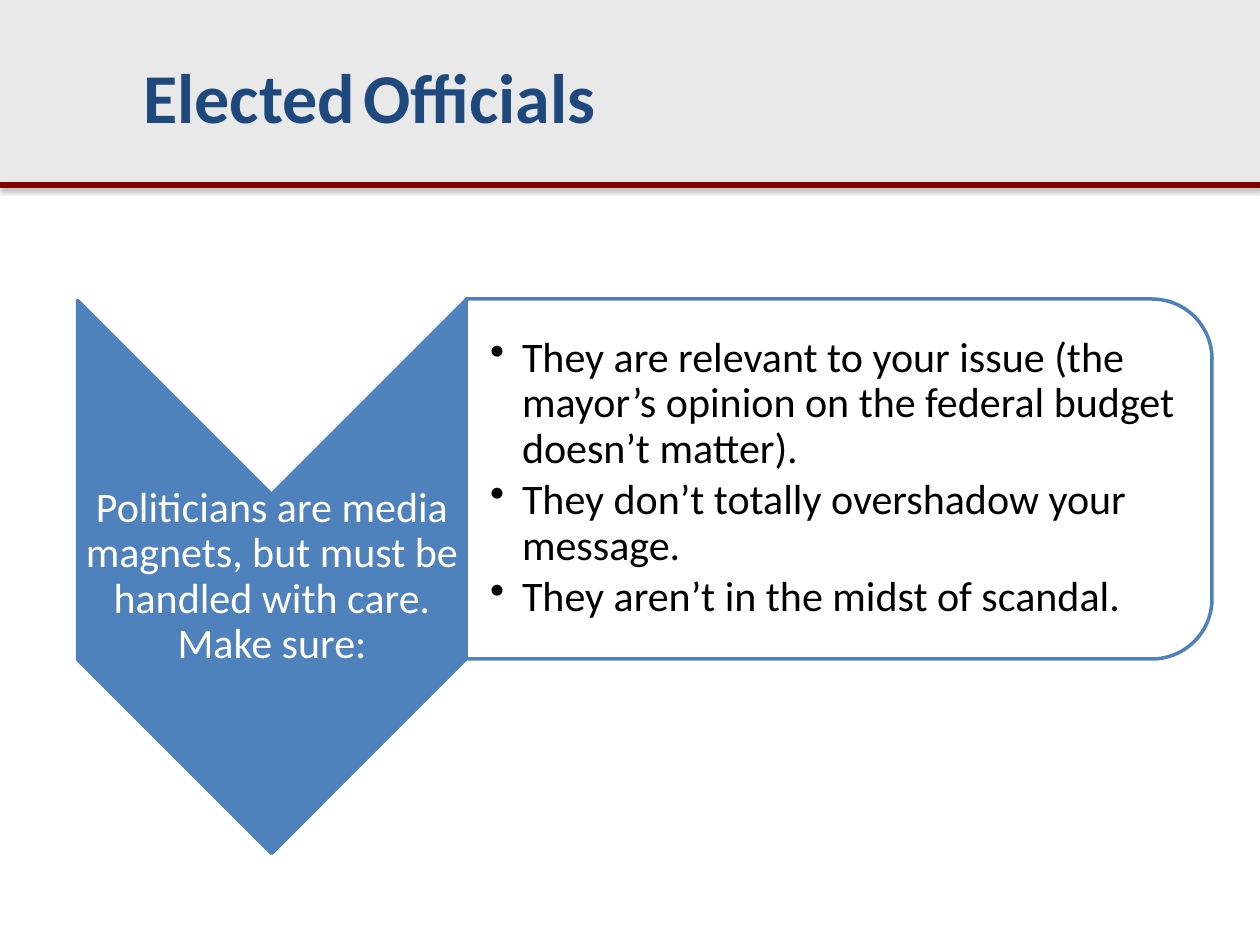
from lxml import etree
from pptx import Presentation
from pptx.dml.color import RGBColor
from pptx.enum.shapes import MSO_CONNECTOR as Connector, MSO_SHAPE as Shape
from pptx.enum.text import MSO_ANCHOR as Anchor, PP_ALIGN as Align
from pptx.oxml import parse_xml
from pptx.oxml.ns import nsdecls, qn
from pptx.util import Pt

PX = 914400 // 126
WIDTH, HEIGHT = 1260, 945


def color(value):
    return RGBColor.from_string(value)


def add_span(para, text, size=24, ink="000000", bold=False, font="Calibri"):
    span = para.add_run()
    span.text = text
    span.font.name = font
    span.font.size = Pt(size)
    span.font.bold = bold
    span.font.color.rgb = color(ink)
    return span


class SlideBuilder:
    navy, blue, maroon, gray, white = "1F497D", "4F81BD", "800000", "E9E9E9", "FFFFFF"

    def __init__(self, page):
        self.page = page

    def shape(self, kind, bounds, fill, line=None, turn=0, opacity=100):
        shape = self.page.shapes.add_shape(kind, *(n * PX for n in bounds))
        shape.shadow.inherit = False
        shape.rotation = turn
        shape.fill.solid()
        shape.fill.fore_color.rgb = color(fill)
        if opacity < 100:
            tint = shape.fill._xPr.find(qn("a:solidFill"))[0]
            etree.SubElement(tint, qn("a:alpha"), val=str(opacity * 1000))
        if line:
            shape.line.color.rgb = color(line)
            shape.line.width = Pt(2)
        else:
            shape.line.fill.background()
        return shape

    def rule(self, y, ink, width):
        line = self.page.shapes.add_connector(
            Connector.STRAIGHT, 0, y * PX, WIDTH * PX, y * PX)
        line.line.color.rgb = color(ink)
        line.line.width = Pt(width)
        line._element.spPr.append(parse_xml(
            f'<a:effectLst {nsdecls("a")}>'
            f'<a:outerShdw blurRad="{Pt(3.1)}" dist="{Pt(1.6)}" dir="5400000" rotWithShape="0">'
            '<a:srgbClr val="000000"><a:alpha val="38000"/></a:srgbClr>'
            '</a:outerShdw></a:effectLst>'))

    def frame(self, bounds, insets=None, anchor=Anchor.TOP):
        box = self.page.shapes.add_textbox(*(n * PX for n in bounds))
        frame = box.text_frame
        frame.word_wrap = True
        frame.vertical_anchor = anchor
        if insets:
            (frame.margin_left, frame.margin_top,
             frame.margin_right, frame.margin_bottom) = (n * PX for n in insets)
        return frame

    def title(self, bounds, spans):
        para = self.frame(bounds).paragraphs[0]
        for text, size, bold in spans:
            add_span(para, text, size=size, ink=self.navy, bold=bold)

    def label(self, bounds, text):
        para = self.frame(bounds, (2, 2, 2, 2), Anchor.MIDDLE).paragraphs[0]
        para.alignment = Align.CENTER
        para.line_spacing = 0.9
        add_span(para, text, ink=self.white)

    def bullets(self, bounds, items, indent=32):
        frame = self.frame(bounds, (24, 2, 2, 2), Anchor.MIDDLE)
        for index, text in enumerate(items):
            para = frame.add_paragraph() if index else frame.paragraphs[0]
            props = para._p.get_or_add_pPr()
            props.set("marL", str(indent * PX))
            props.set("indent", str(-indent * PX))
            etree.SubElement(props, qn("a:buChar"), char="•")
            para.line_spacing = 0.9
            if index:
                para.space_before = Pt(3.6)
            add_span(para, text)


def main():
    deck = Presentation()
    deck.slide_width, deck.slide_height = WIDTH * PX, HEIGHT * PX
    slide = SlideBuilder(deck.slides.add_slide(deck.slide_layouts[6]))

    # Header band and rule
    slide.shape(Shape.RECTANGLE, (0, 0, WIDTH, 182), slide.gray)
    slide.rule(185, slide.maroon, 3)

    # Chevron pointing down
    slide.shape(Shape.CHEVRON, (-5, 383, 553, 388), slide.blue, slide.blue, turn=90)
    slide.label((78, 494, 388, 166),
                "Politicians are media magnets, but must be handled with care. Make sure:")

    # Panel with the conditions
    slide.shape(Shape.ROUND_2_SAME_RECTANGLE, (659, 106, 360, 746),
                slide.white, slide.blue, turn=90, opacity=90)
    slide.bullets((466, 316, 728, 325), [
        "They are relevant to your issue (the mayor’s opinion on the federal budget doesn’t matter).",
        "They don’t totally overshadow your message.",
        "They aren’t in the midst of scandal.",
    ])

    # Title
    slide.title((131, 47, 538, 97),
                [("Elected", 40, True), (" ", 20, False), ("Officials", 40, True)])

    deck.save("out.pptx")


if __name__ == "__main__":
    main()
